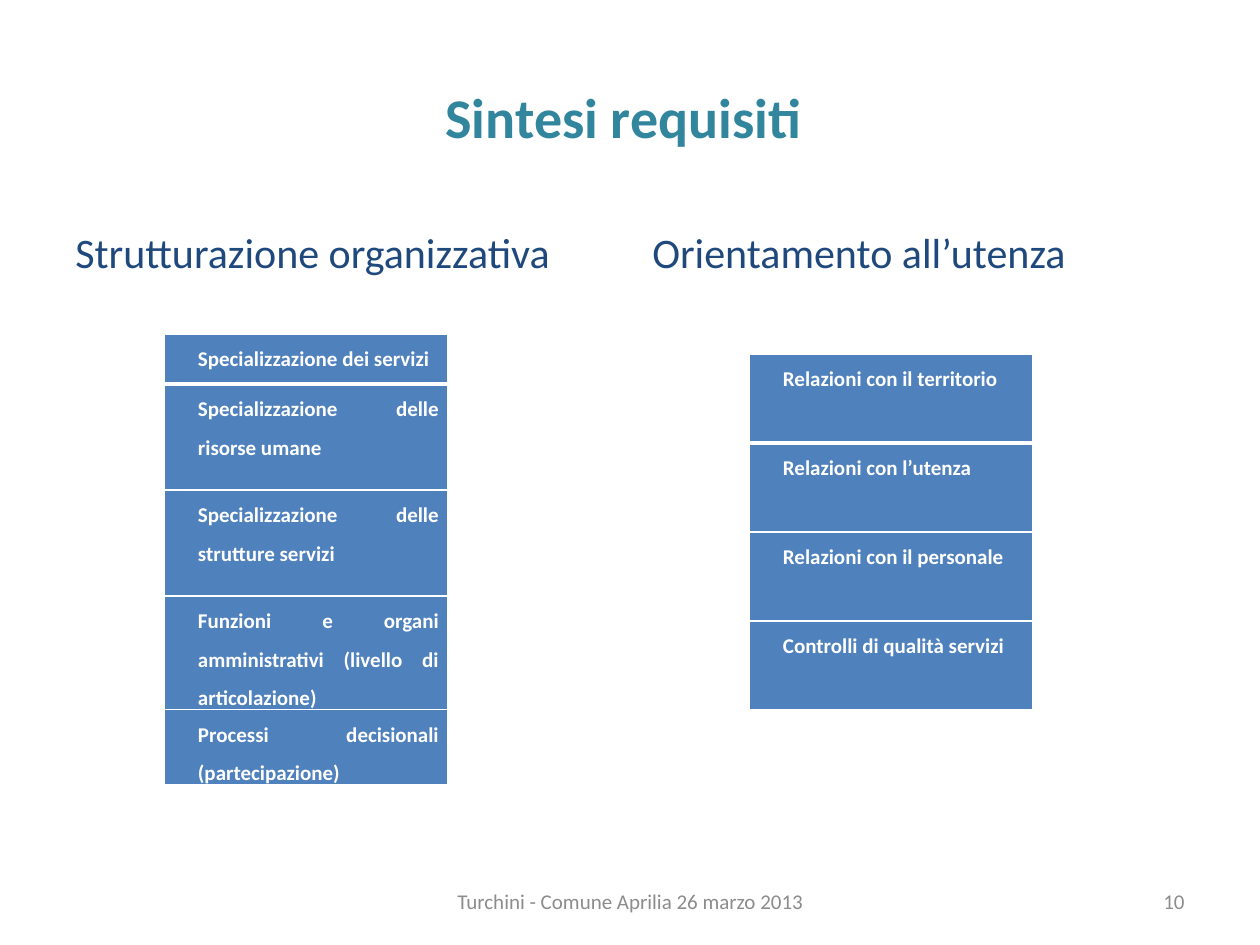
from lxml import etree
from pptx import Presentation
from pptx.dml.color import RGBColor
from pptx.enum.text import MSO_ANCHOR, PP_ALIGN
from pptx.oxml.ns import qn
from pptx.util import Pt

PX = 7257  # EMU in one px, 126 px to the inch
LEFT, CENTER, RIGHT, JUSTIFY = PP_ALIGN.LEFT, PP_ALIGN.CENTER, PP_ALIGN.RIGHT, PP_ALIGN.JUSTIFY
TOP, MIDDLE = MSO_ANCHOR.TOP, MSO_ANCHOR.MIDDLE
COLORS = {"title": "31859C", "heading": "1F497D", "footer": "8C8C8C",
          "cell": "4F81BD", "white": "FFFFFF"}


class SlideBuilder:
    font = "Calibri"

    def __init__(self, page):
        self.page = page

    def style(self, para, size, color, bold=False, align=LEFT):
        para.alignment = align
        for span in para.runs:
            span.font.name = self.font
            span.font.size = Pt(size)
            span.font.bold = bold
            span.font.color.rgb = RGBColor.from_string(COLORS[color])

    def text(self, left, top, width, height, words, size, color,
             bold=False, align=LEFT, anchor=TOP):
        box = self.page.shapes.add_textbox(left * PX, top * PX, width * PX, height * PX)
        frame = box.text_frame
        frame.word_wrap = True
        frame.vertical_anchor = anchor
        frame.text = words
        self.style(frame.paragraphs[0], size, color, bold, align)

    def borders(self, cell, **widths):
        properties = cell._tc.get_or_add_tcPr()
        for index, side in enumerate("LRTB"):
            line = etree.Element(qn("a:ln" + side), w=str(Pt(widths.get(side, 1))))
            fill = etree.SubElement(line, qn("a:solidFill"))
            etree.SubElement(fill, qn("a:srgbClr"), val=COLORS["white"])
            properties.insert(index, line)

    def table(self, left, top, width, rows):
        """Draw one column from (height, words) rows, with a thick line under the first."""
        total = sum(height for height, _ in rows)
        table = self.page.shapes.add_table(
            len(rows), 1, left * PX, top * PX, width * PX, total * PX).table
        table.first_row = table.horz_banding = False
        for index, (height, words) in enumerate(rows):
            table.rows[index].height = height * PX
            cell = table.cell(index, 0)
            cell.margin_left = cell.margin_right = 9 * PX
            cell.margin_top = cell.margin_bottom = 0
            cell.fill.solid()
            cell.fill.fore_color.rgb = RGBColor.from_string(COLORS["cell"])
            self.borders(cell, T=3 if index == 1 else 1, B=3 if index == 0 else 1)
            cell.text_frame.text = words
            para = cell.text_frame.paragraphs[0]
            para.line_spacing = 1.5
            para.space_after = Pt(10)
            para._p.get_or_add_pPr().set("marL", str(25 * PX))
            self.style(para, 12, "white", bold=True, align=JUSTIFY)


def main():
    deck = Presentation()
    deck.slide_width, deck.slide_height = 1260 * PX, 945 * PX
    slide = SlideBuilder(deck.slides.add_slide(deck.slide_layouts[6]))

    # Title and column headings
    slide.text(63, 38, 1134, 157, "Sintesi requisiti ", 32, "title",
               bold=True, align=CENTER, anchor=MIDDLE)
    for left, heading in ((63, "Strutturazione organizzativa"),
                          (640, "Orientamento all’utenza")):
        slide.text(left, 220, 557, 624, heading, 24, "heading")

    # Requirement tables
    slide.table(164, 334, 284, [
        (50, "Specializzazione dei servizi"),
        (106, "Specializzazione delle risorse umane"),
        (106, "Specializzazione delle strutture servizi"),
        (106, "Funzioni e organi amministrativi (livello di articolazione)"),
        (50, "Processi decisionali (partecipazione)"),
    ])
    relations = ("Relazioni con il territorio", "Relazioni con l’utenza",
                 "Relazioni con il personale", "Controlli di qualità servizi")
    slide.table(749, 354, 284, [(89, words) for words in relations])

    # Footer and page number
    slide.text(431, 876, 399, 50, "Turchini - Comune Aprilia 26 marzo 2013",
               12, "footer", align=CENTER, anchor=MIDDLE)
    slide.text(903, 876, 294, 50, "10", 12, "footer", align=RIGHT, anchor=MIDDLE)

    deck.save("out.pptx")


if __name__ == "__main__":
    main()
